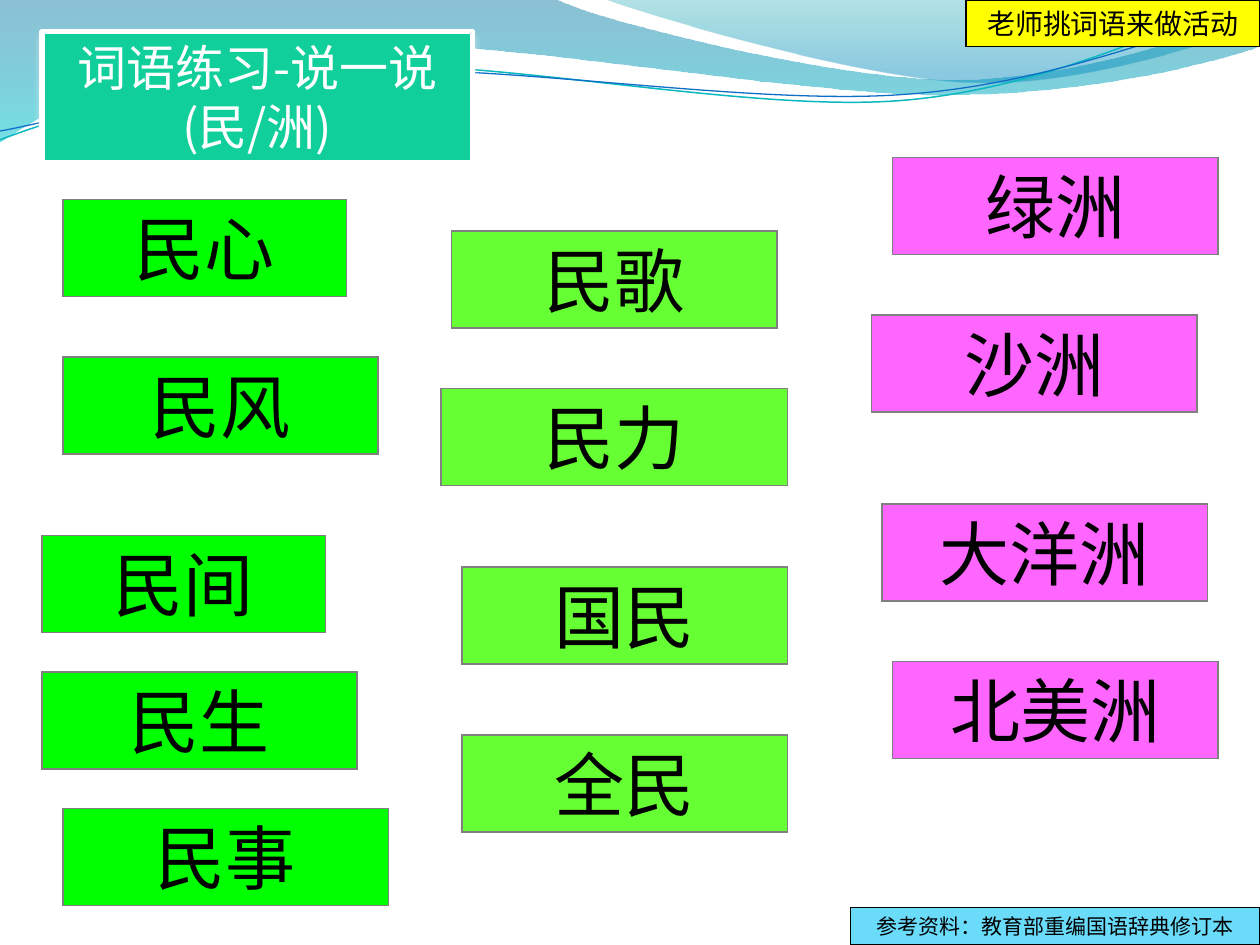
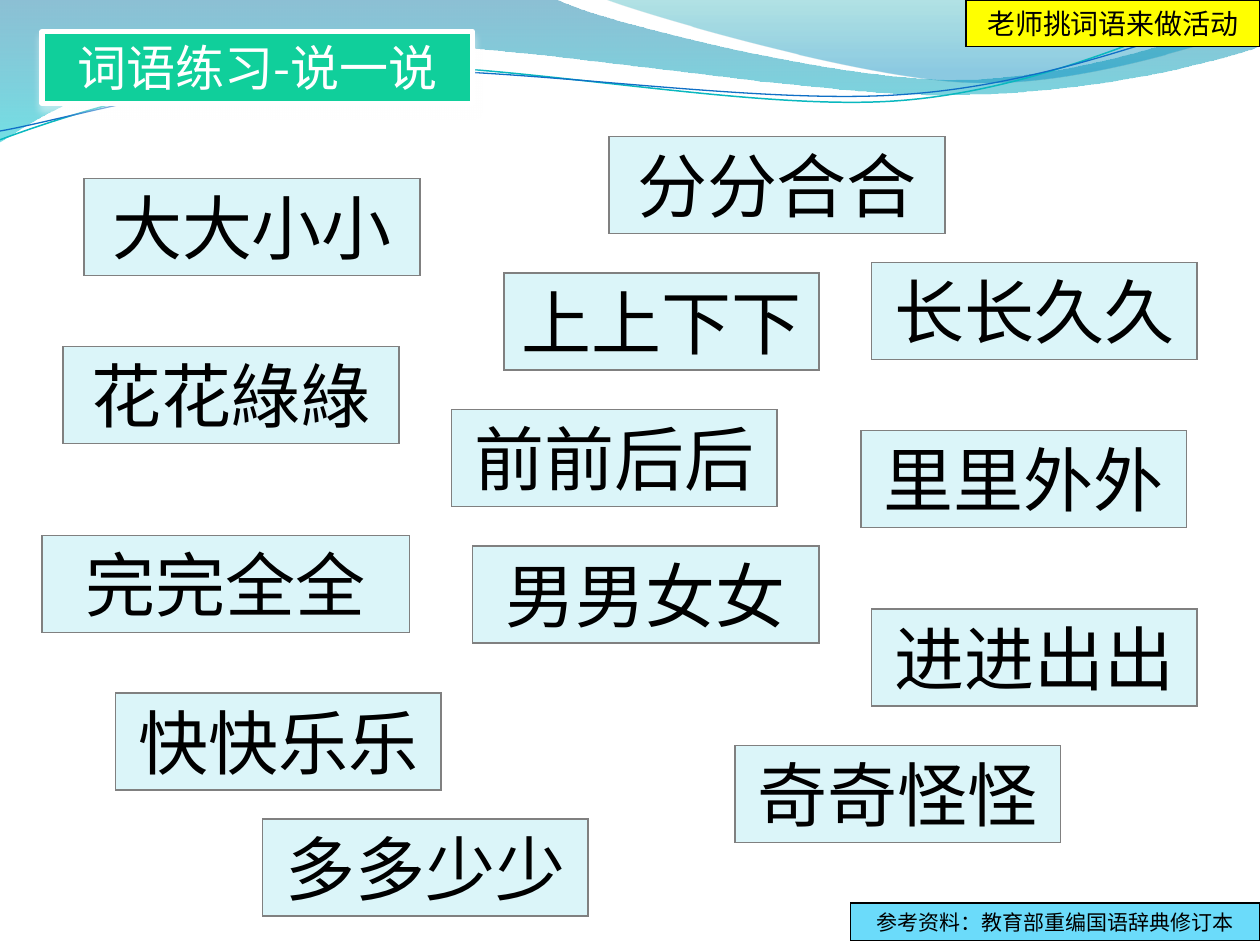
"""Build two slides of Chinese word practice cards under a wave banner."""
from lxml.etree import SubElement
from pptx import Presentation
from pptx.dml.color import RGBColor
from pptx.enum.shapes import MSO_SHAPE as Shape
from pptx.enum.text import MSO_ANCHOR as Anchor, MSO_AUTO_SIZE as AutoSize, PP_ALIGN as Align
from pptx.oxml import parse_xml
from pptx.oxml.ns import nsdecls, qn
from pptx.util import Cm, Pt

FONT = "Noto Sans CJK SC"
INCH = Cm(2.54)
GRID = INCH / 12
CARD_HEIGHT = 9.24
COLORS = {
    "green": "00FF00", "lime": "66FF33", "pink": "FF66FF", "ice": "DBF5F9",
    "title": "10CF9B", "source": "6BDBFA", "hint": "FFFF00",
    "gray": "808080", "black": "000000", "white": "FFFFFF",
    "teal_line": "0AB8BF", "blue_line": "0F6FC6",
    "wave_blue": "0074A1", "wave_cyan": "00C6CF", "crest_teal": "00A1A9", "crest_blue": "008BBF",
}
WAVES = [
    ([(0, 0), [(4.4, -0.01)],
      [(4.76, 0.17), (6.64, 0.63), (7.58, 0.63)], [(8.53, 0.63), (9.58, 0.26), (10, 0.09)],
      [(10.01, 0.36)], [(9.83, 0.44), (8.7, 0.76), (7.46, 0.75)],
      [(6.22, 0.75), (3.82, 0.28), (2.57, 0.34)], [(1.29, 0.36), (0.46, 0.83), (-0.01, 1.13)]],
     [(0, "wave_blue", 45), (100, "wave_cyan", 55)]),
    ([(4.79, -0.01), [(5.09, 0.11), (6.82, 0.62), (7.69, 0.65)],
      [(8.56, 0.69), (9.61, 0.32), (10, 0.21)], [(10, 0)]],
     [(0, "crest_teal", 30), (80, "crest_blue", 45)]),
]
STRANDS = [
    ([(0, 1.11), [(0.48, 0.93), (1.58, 0.57), (2.77, 0.52)],
      [(3.95, 0.47), (5.93, 0.89), (7.13, 0.8)], [(8.33, 0.71), (9.38, 0.15), (9.98, -0.02)]],
     "teal_line", 0.85),
    ([(0, 1.04), [(0.47, 0.96), (1.64, 0.61), (2.83, 0.56)],
      [(4.03, 0.51), (5.97, 0.84), (7.17, 0.75)], [(8.36, 0.67), (9.41, 0.21), (10, 0.06)]],
     "blue_line", 0.75),
]
SLIDES = [
    ("词语练习-说一说(民/洲)", 12.5, 86.4, {
        "green": [("民心", 6, 19, 27), ("民风", 6, 34, 30), ("民间", 4, 51, 27),
                  ("民生", 4, 64, 30), ("民事", 6, 77, 31)],
        "lime": [("民歌", 43, 22, 31), ("民力", 42, 37, 33), ("国民", 44, 54, 31),
                 ("全民", 44, 70, 31)],
        "pink": [("绿洲", 85, 15, 31), ("沙洲", 83, 30, 31), ("大洋洲", 84, 48, 31),
                 ("北美洲", 85, 63, 31)],
    }),
    ("词语练习-说一说", 6.84, 86, {
        "ice": [("大大小小", 8, 17, 32), ("花花綠綠", 6, 33, 32), ("完完全全", 4, 51, 35),
                ("快快乐乐", 11, 66, 31), ("多多少少", 25, 78, 31), ("分分合合", 58, 13, 32),
                ("上上下下", 48, 26, 30), ("前前后后", 43, 39, 31), ("男男女女", 45, 52, 33),
                ("长长久久", 83, 25, 31), ("里里外外", 82, 41, 31), ("进进出出", 83, 58, 31),
                ("奇奇怪怪", 70, 71, 31)],
    }),
]


def draw_curve(slide, outline, close):
    """Draw straight (one point) and cubic (three points) segments given in inches."""
    start, *segments = outline
    points = [(x * INCH, y * INCH) for segment in [[start], *segments] for x, y in segment]
    builder = slide.shapes.build_freeform(*points[0])
    builder.add_line_segments(points[1:], close=close)
    shape = builder.convert_to_shape()
    shape.shadow.inherit = False
    steps = iter(list(shape.element.iter(qn("a:lnTo"))))
    for segment in segments:
        first, *others = [next(steps) for _ in segment]
        if others:
            first.tag = qn("a:cubicBezTo")
        for step in others:
            first.append(step[0])
            step.getparent().remove(step)
    return shape


def dress_box(shape, box, text, size, fill, line, line_width=0.75, color="black"):
    """Place a box by grid units and give it fill, border and centred text."""
    shape.left, shape.top, shape.width, shape.height = (round(value * GRID) for value in box)
    shape.shadow.inherit = False
    shape.fill.solid()
    shape.fill.fore_color.rgb = RGBColor.from_string(COLORS[fill])
    shape.line.color.rgb = RGBColor.from_string(COLORS[line])
    shape.line.width = Pt(line_width)
    frame = shape.text_frame
    frame.text = text
    frame.word_wrap = True
    frame.auto_size = AutoSize.NONE
    frame.vertical_anchor = Anchor.TOP
    paragraph = frame.paragraphs[0]
    paragraph.alignment = Align.CENTER
    paragraph.font.size = Pt(size)
    paragraph.font.color.rgb = RGBColor.from_string(COLORS[color])
    paragraph.font.name = FONT
    for properties in shape.element.iter(qn("a:defRPr")):
        SubElement(properties, qn("a:ea"), typeface=FONT)


presentation = Presentation()
presentation.slide_width, presentation.slide_height = Cm(25.4), Cm(19.05)
layout = presentation.slide_layouts[5]
slides = [presentation.slides.add_slide(layout) for _ in SLIDES]

banner = []
for outline, stops in WAVES:
    wave = draw_curve(slides[0], outline, True)
    wave.line.fill.background()
    stop_xml = "".join(
        f'<a:gs pos="{position * 1000}"><a:srgbClr val="{COLORS[name]}">'
        f'<a:alpha val="{opacity * 1000}"/></a:srgbClr></a:gs>'
        for position, name, opacity in stops)
    gradient = parse_xml(f'<a:gradFill {nsdecls("a")} rotWithShape="1"><a:gsLst>{stop_xml}</a:gsLst>'
                         '<a:lin ang="5400000" scaled="1"/></a:gradFill>')
    wave.element.spPr.find(qn("a:custGeom")).addnext(gradient)
    banner.append(wave)
for outline, name, width in STRANDS:
    strand = draw_curve(slides[0], outline, False)
    strand.fill.background()
    strand.line.color.rgb = RGBColor.from_string(COLORS[name])
    strand.line.width = Pt(width)
    banner.append(strand)
for number, shape in enumerate(banner, start=101):
    shape.element.nvSpPr.cNvPr.set("id", str(number))
    layout.shapes.element.append(shape.element)

for slide, (title, title_height, source_top, groups) in zip(slides, SLIDES):
    heading = slide.shapes.title
    dress_box(heading, (4, 3, 41, title_height), title, 28, "title", "white", 3, "white")
    effects = heading.element.spPr.find(qn("a:effectLst"))
    effects.append(parse_xml(
        f'<a:outerShdw {nsdecls("a")} blurRad="{Pt(4.5)}" dist="{Pt(3)}" dir="5400000" rotWithShape="0">'
        f'<a:srgbClr val="{COLORS["white"]}"><a:alpha val="48000"/></a:srgbClr></a:outerShdw>'))
    boxes = [((left, top, width, CARD_HEIGHT), word, 40, fill, "gray")
             for fill, cards in groups.items() for word, left, top, width in cards]
    boxes += [
        ((81, source_top, 39, 3.6), "参考资料：教育部重编国语辞典修订本", 12, "source", "black"),
        ((92, 0, 28, 4.44), "老师挑词语来做活动", 16, "hint", "black"),
    ]
    for box in boxes:
        card = slide.shapes.add_shape(Shape.RECTANGLE, 0, 0, 0, 0)
        dress_box(card, *box)
        SubElement(card.element.spPr.find(qn("a:ln")), qn("a:miter"), lim="800000")

presentation.save("out.pptx")
